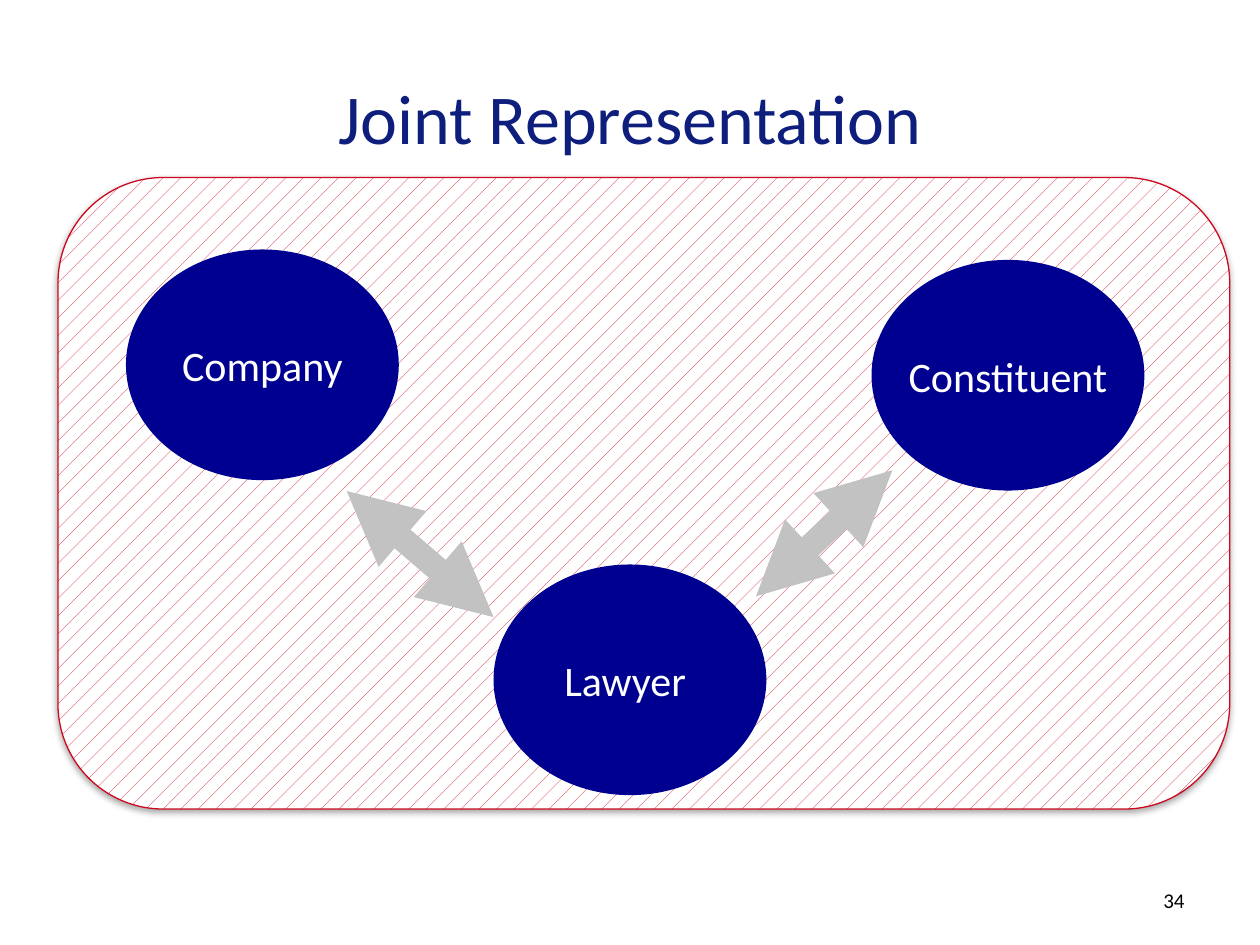
from lxml.etree import SubElement
from pptx import Presentation
from pptx.dml.color import RGBColor
from pptx.enum.dml import MSO_PATTERN
from pptx.enum.shapes import MSO_CONNECTOR, MSO_SHAPE
from pptx.enum.text import MSO_ANCHOR, PP_ALIGN
from pptx.oxml.ns import qn
from pptx.util import Cm, Pt

RED = RGBColor(0xCD, 0x09, 0x20)
TITLE_BLUE = RGBColor(0x0E, 0x1E, 0x7D)
NAVY = RGBColor(0x00, 0x00, 0x90)
GREY = RGBColor(0xC1, 0xC2, 0xC1)
WHITE = RGBColor(0xFF, 0xFF, 0xFF)
BLACK = RGBColor(0x00, 0x00, 0x00)
FONT = "Calibri"


def write_text(frame, text, *, size, color, align=PP_ALIGN.CENTER, wrap=True, after=0):
    """Fill a text frame with one formatted, vertically centred paragraph."""
    frame.word_wrap = wrap
    frame.vertical_anchor = MSO_ANCHOR.MIDDLE
    paragraph = frame.paragraphs[0]
    paragraph.alignment = align
    paragraph.space_after = Pt(after)
    run = paragraph.add_run()
    run.text = text
    run.font.name = FONT
    run.font.size = Pt(size)
    run.font.color.rgb = color


def add_title(slide, text):
    """Place and format the title placeholder."""
    title = slide.shapes.title
    title.left, title.top, title.width, title.height = Cm(1.27), Cm(0.76), Cm(22.86), Cm(3.18)
    write_text(title.text_frame, text, size=40, color=TITLE_BLUE, after=6)


def add_panel(slide):
    """Add the hatched panel, with the theme shadow, behind the title."""
    panel = slide.shapes.add_shape(
        MSO_SHAPE.ROUNDED_RECTANGLE, Cm(1.17), Cm(3.58), Cm(23.62), Cm(12.73))
    panel.fill.patterned()
    panel.fill.pattern = MSO_PATTERN.PERCENT_5
    panel.fill.fore_color.rgb = RED
    panel.fill.back_color.rgb = WHITE
    panel.line.color.rgb = RED
    panel.line.width = Pt(0.75)
    slide.shapes.title.element.addprevious(panel.element)


def add_party(slide, name, left, top):
    """Add the ellipse for one party."""
    party = slide.shapes.add_shape(MSO_SHAPE.OVAL, Cm(left), Cm(top), Cm(5.5), Cm(4.65))
    party.shadow.inherit = False
    party.fill.solid()
    party.fill.fore_color.rgb = NAVY
    party.line.fill.background()
    write_text(party.text_frame, name, size=24, color=WHITE, wrap=False)


def add_relation(slide, start, end):
    """Add a thick double-headed arrow between two parties."""
    relation = slide.shapes.add_connector(
        MSO_CONNECTOR.STRAIGHT, *(Cm(value) for value in (*start, *end)))
    relation.line.color.rgb = GREY
    relation.line.width = Pt(14)
    outline = relation.line._get_or_add_ln()
    for arrowhead in ("a:headEnd", "a:tailEnd"):
        SubElement(outline, qn(arrowhead), type="triangle")
    SubElement(relation.element.spPr, qn("a:effectLst"))


def add_page_number(slide, number):
    """Add the page number at the bottom right."""
    page_number = slide.shapes.add_textbox(Cm(18.2), Cm(17.65), Cm(5.93), Cm(1.01))
    write_text(page_number.text_frame, number, size=12, color=BLACK, align=PP_ALIGN.RIGHT)


def main():
    """Build the slide and save it."""
    deck = Presentation()
    deck.slide_width, deck.slide_height = Cm(25.4), Cm(19.05)
    slide = deck.slides.add_slide(deck.slide_layouts[5])
    add_title(slide, "Joint Representation")
    add_panel(slide)
    add_party(slide, "Company", 2.54, 5.03)
    add_party(slide, "Constituent", 17.57, 5.24)
    add_relation(slide, (6.99, 9.9), (9.95, 12.44))
    add_party(slide, "Lawyer ", 9.95, 11.38)
    add_relation(slide, (17.99, 9.48), (15.24, 12.02))
    add_page_number(slide, "34")
    deck.save("out.pptx")


if __name__ == "__main__":
    main()
